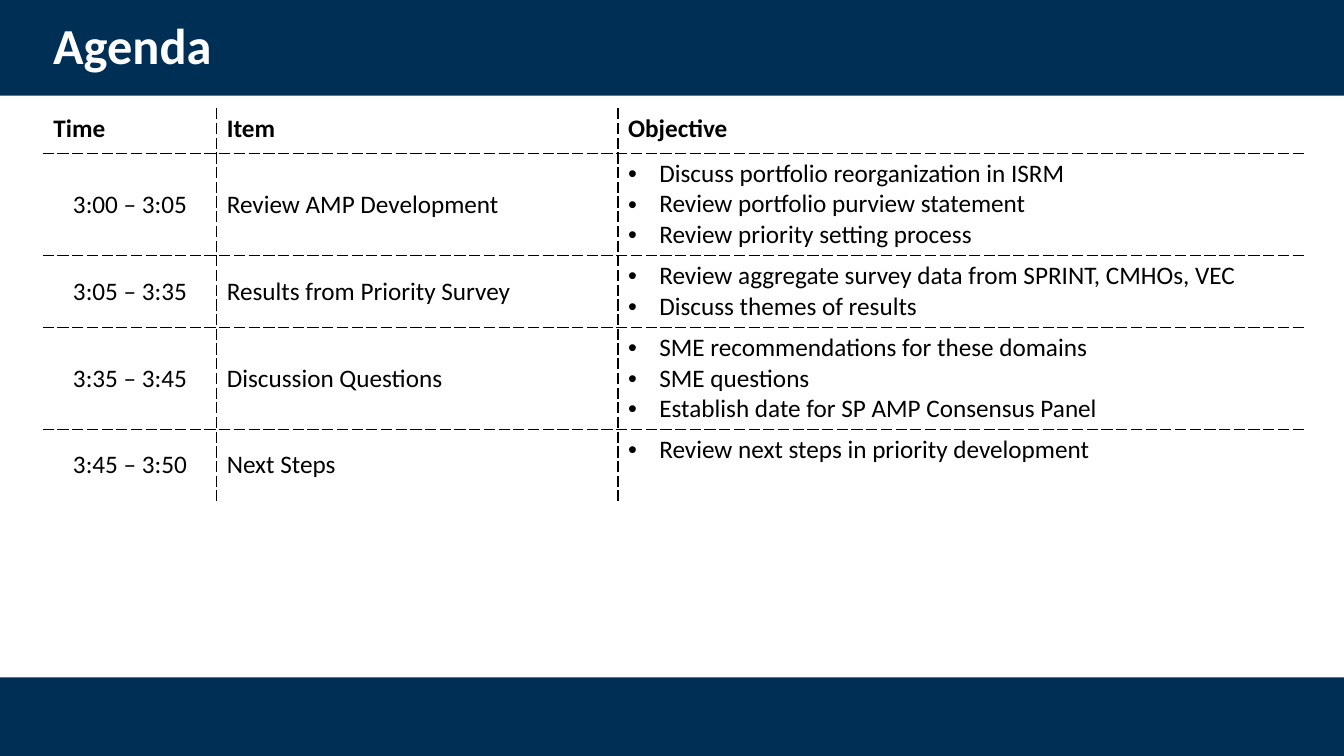
from lxml import etree
from pptx import Presentation
from pptx import util as u
from pptx.dml import color
from pptx.enum import shapes, text
from pptx.oxml import ns

COLORS = {"navy": "002F56", "white": "FFFFFF", "black": "000000"}
TITLE_FONT = {"name": "Calibri", "size": u.Pt(36), "bold": True}
HEADER_FONT = {"name": "Calibri", "size": u.Pt(18), "bold": True}
BODY_FONT = {"name": "Calibri", "size": u.Pt(18), "bold": False}
COLUMN_WIDTHS = [1.72, 3.98, 6.81]
HEADER_HEIGHT = 0.44
LINE_HEIGHT = 0.3
HEADERS = ["Time", "Item", "Objective"]
AGENDA = [
    ("3:00 – 3:05", "Review AMP Development", [
        "Discuss portfolio reorganization in ISRM",
        "Review portfolio purview statement",
        "Review priority setting process"]),
    ("3:05 – 3:35", "Results from Priority Survey", [
        "Review aggregate survey data from SPRINT, CMHOs, VEC",
        "Discuss themes of results"]),
    ("3:35 – 3:45", "Discussion Questions", [
        "SME recommendations for these domains",
        "SME questions",
        "Establish date for SP AMP Consensus Panel"]),
    ("3:45 – 3:50", "Next Steps", [
        "Review next steps in priority development"]),
]


def rgb(name):
    return color.RGBColor.from_string(COLORS[name])


def set_font(paragraph, values, color_name):
    font = paragraph.runs[0].font
    for name, value in values.items():
        setattr(font, name, value)
    font.color.rgb = rgb(color_name)


def add_band(slide, top, height):
    band = slide.shapes.add_shape(
        shapes.MSO_SHAPE.RECTANGLE, 0, u.Inches(top), u.Inches(13.33), u.Inches(height))
    band.shadow.inherit = False
    band.fill.solid()
    band.fill.fore_color.rgb = rgb("navy")
    band.line.fill.background()


def add_title(slide, title):
    box = slide.shapes.add_textbox(
        u.Inches(0.43), u.Inches(0.11), u.Inches(11.5), u.Inches(0.74))
    frame = box.text_frame
    frame.word_wrap = True
    frame.vertical_anchor = text.MSO_ANCHOR.MIDDLE
    paragraph = frame.paragraphs[0]
    paragraph.text = title
    paragraph.line_spacing = 0.9
    set_font(paragraph, TITLE_FONT, "white")


def add_borders(cell, sides):
    properties = cell._tc.get_or_add_tcPr()
    for side in sides:
        line = etree.SubElement(properties, ns.qn(f"a:ln{side}"), w=str(u.Pt(1)))
        fill = etree.SubElement(line, ns.qn("a:solidFill"))
        etree.SubElement(fill, ns.qn("a:srgbClr"), val=COLORS["black"])
        etree.SubElement(line, ns.qn("a:prstDash"), val="sysDash")


def add_bullet(paragraph):
    properties = paragraph._p.get_or_add_pPr()
    indent = u.Inches(0.31)
    properties.set("marL", str(indent))
    properties.set("indent", str(-indent))
    etree.SubElement(properties, ns.qn("a:buFont"), typeface="Arial")
    etree.SubElement(properties, ns.qn("a:buChar"), char="•")


def fill_cell(cell, lines, font, anchor, alignment=None, bulleted=False):
    cell.fill.solid()
    cell.fill.fore_color.rgb = rgb("white")
    cell.vertical_anchor = anchor
    frame = cell.text_frame
    frame.text = "\n".join(lines)
    for paragraph in frame.paragraphs:
        if bulleted:
            add_bullet(paragraph)
        paragraph.alignment = alignment
        set_font(paragraph, font, "black")


def add_agenda_table(slide):
    heights = [HEADER_HEIGHT]
    heights += [LINE_HEIGHT * max(2, len(goals)) + 0.11 for _, _, goals in AGENDA]
    row_count, column_count = len(heights), len(COLUMN_WIDTHS)
    table = slide.shapes.add_table(
        row_count, column_count, u.Inches(0.43), u.Inches(1.08),
        u.Inches(sum(COLUMN_WIDTHS)), u.Inches(sum(heights))).table
    table.horz_banding = False
    for column, width in zip(table.columns, COLUMN_WIDTHS):
        column.width = u.Inches(width)
    for row, height in zip(table.rows, heights):
        row.height = u.Inches(height)
    for row in range(row_count):
        for column in range(column_count):
            inner_sides = {"L": column > 0, "R": column < column_count - 1,
                           "T": row > 0, "B": row < row_count - 1}
            add_borders(table.cell(row, column),
                        [side for side, inner in inner_sides.items() if inner])
    top, middle = text.MSO_ANCHOR.TOP, text.MSO_ANCHOR.MIDDLE
    for column, header in enumerate(HEADERS):
        fill_cell(table.cell(0, column), [header], HEADER_FONT, top)
    for row, (time, item, goals) in enumerate(AGENDA, start=1):
        fill_cell(table.cell(row, 0), [time], BODY_FONT, middle, text.PP_ALIGN.CENTER)
        fill_cell(table.cell(row, 1), [item], BODY_FONT, middle)
        fill_cell(table.cell(row, 2), goals, BODY_FONT, top, bulleted=True)


def main():
    presentation = Presentation()
    presentation.slide_width = u.Inches(13.33)
    presentation.slide_height = u.Inches(7.5)
    slide = presentation.slides.add_slide(presentation.slide_layouts[6])
    add_band(slide, 0, 0.95)
    add_band(slide, 6.72, 0.78)
    add_agenda_table(slide)
    add_title(slide, "Agenda")
    presentation.save("out.pptx")


if __name__ == "__main__":
    main()
